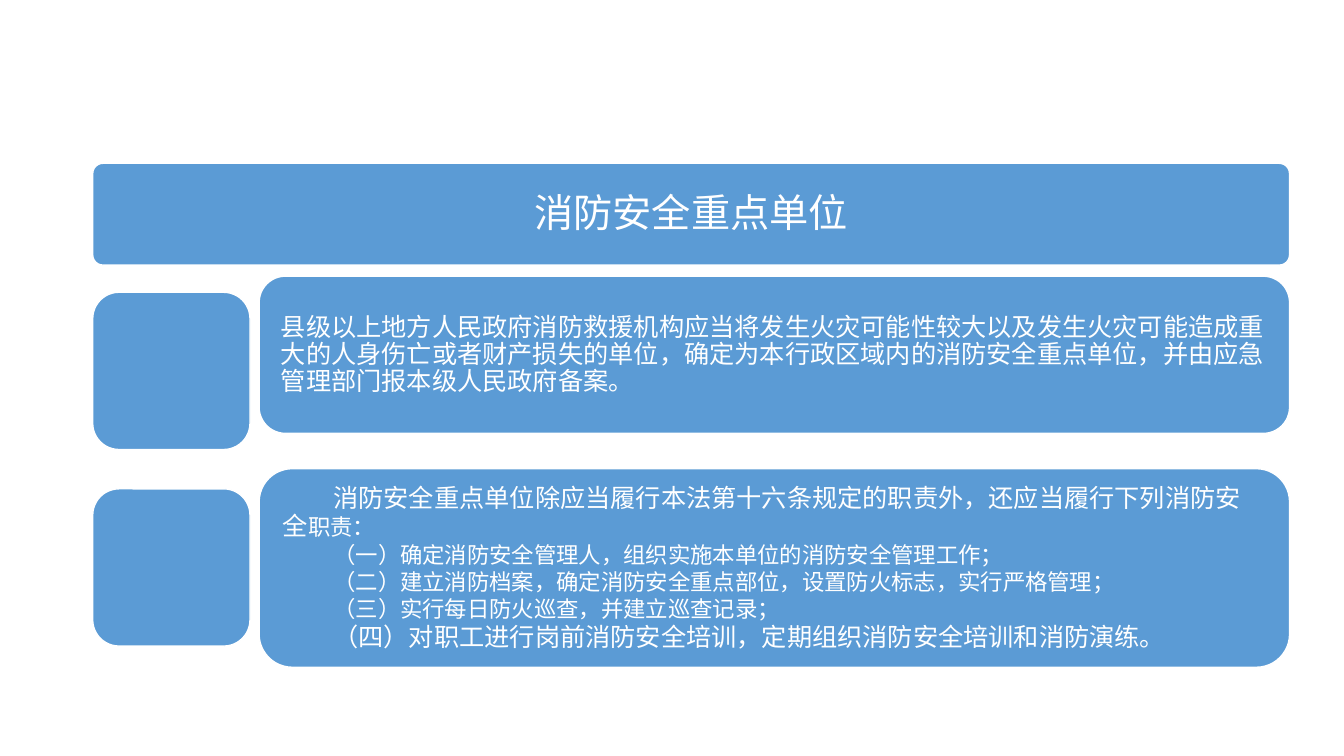
"""Build a slide on key fire safety units with a header and two numbered-row panels."""
from dataclasses import dataclass

from pptx import Presentation
from pptx import util as u
from pptx.dml import color
from pptx.enum import shapes, text
from pptx.oxml import ns

FONT = "Noto Sans CJK SC"
BLUE = "5B9BD5"
WHITE = "FFFFFF"
LEFT = 0.92
TILE = 1.56
PANEL_LEFT = 2.57
PANEL_WIDTH = 10.22


@dataclass
class Run:
    wording: str
    size: int


@dataclass
class Line:
    runs: list[Run]
    spacing: float
    indent: float = 0
    align: text.PP_ALIGN = text.PP_ALIGN.LEFT


@dataclass
class Block:
    left: float
    top: float
    width: float
    height: float
    corner: float = 0.167
    inset: float = 0.14
    lines: tuple[Line, ...] = ()


def rgb(value: str) -> color.RGBColor:
    return color.RGBColor.from_string(value)


def add_line(paragraph, line: Line) -> None:
    paragraph.alignment = line.align
    paragraph.line_spacing = u.Pt(line.spacing)
    if line.indent:
        properties = paragraph._p.get_or_add_pPr()
        properties.set("marL", "0")
        properties.set("indent", str(u.Inches(line.indent)))
    for item in line.runs:
        run = paragraph.add_run()
        run.text = item.wording
        run.font.size = u.Pt(item.size)
        run.font.name = FONT
        run.font.color.rgb = rgb(WHITE)
        east_asian = run.font._element.makeelement(ns.qn("a:ea"), {"typeface": FONT})
        run.font._element.find(ns.qn("a:latin")).addnext(east_asian)


def add_block(slide, block: Block) -> None:
    shape = slide.shapes.add_shape(
        shapes.MSO_SHAPE.ROUNDED_RECTANGLE,
        u.Inches(block.left), u.Inches(block.top),
        u.Inches(block.width), u.Inches(block.height),
    )
    shape.adjustments[0] = block.corner
    shape.shadow.inherit = False
    shape.fill.solid()
    shape.fill.fore_color.rgb = rgb(BLUE)
    shape.line.color.rgb = rgb(WHITE)
    shape.line.width = u.Pt(1)
    frame = shape.text_frame
    frame.word_wrap = True
    frame.vertical_anchor = text.MSO_ANCHOR.MIDDLE
    frame.margin_left = frame.margin_right = u.Inches(block.inset)
    frame.margin_top = frame.margin_bottom = u.Inches(block.inset)
    for index, line in enumerate(block.lines):
        paragraph = frame.add_paragraph() if index else frame.paragraphs[0]
        add_line(paragraph, line)


HEADER = Line([Run("消防安全重点单位", 28)], 30, align=text.PP_ALIGN.CENTER)
DEFINITION = Line([Run(
    "县级以上地方人民政府消防救援机构应当将发生火灾可能性较大以及发生火灾可能造成重大的人身伤亡"
    "或者财产损失的单位，确定为本行政区域内的消防安全重点单位，并由应急管理部门报本级人民政府备案。",
    18)], 19.4)
DUTIES = (
    Line([Run("消防安全重点单位除应当履行本法第十六条规定的职责外，还应当履行下列消防安全", 18),
          Run("职责：", 16)], 20, 0.5),
    Line([Run("（一）确定消防安全管理人，组织实施本单位的消防安全管理工作；", 16)], 19.4, 0.5),
    Line([Run("（二）建立消防档案，确定消防安全重点部位，设置防火标志，实行严格管理；", 16)], 19.4, 0.5),
    Line([Run("（三）实行每日防火巡查，并建立巡查记录；", 16)], 19.4, 0.5),
    Line([Run("（四）对职工进行岗前消防安全培训，定期组织消防安全培训和消防演练。", 18)], 21, 0.5),
)
BLOCKS = (
    Block(LEFT, 1.62, 11.87, 1.01, corner=0.1, inset=0.06, lines=(HEADER,)),
    Block(LEFT, 2.9, TILE, TILE),
    Block(PANEL_LEFT, 2.74, PANEL_WIDTH, TILE, lines=(DEFINITION,)),
    Block(LEFT, 4.85, TILE, TILE),
    Block(PANEL_LEFT, 4.65, PANEL_WIDTH, 1.97, lines=DUTIES),
)


def main() -> None:
    presentation = Presentation()
    presentation.slide_width = u.Inches(13.33)
    presentation.slide_height = u.Inches(7.5)
    slide = presentation.slides.add_slide(presentation.slide_layouts[6])
    for block in BLOCKS:
        add_block(slide, block)
    presentation.save("out.pptx")


if __name__ == "__main__":
    main()
